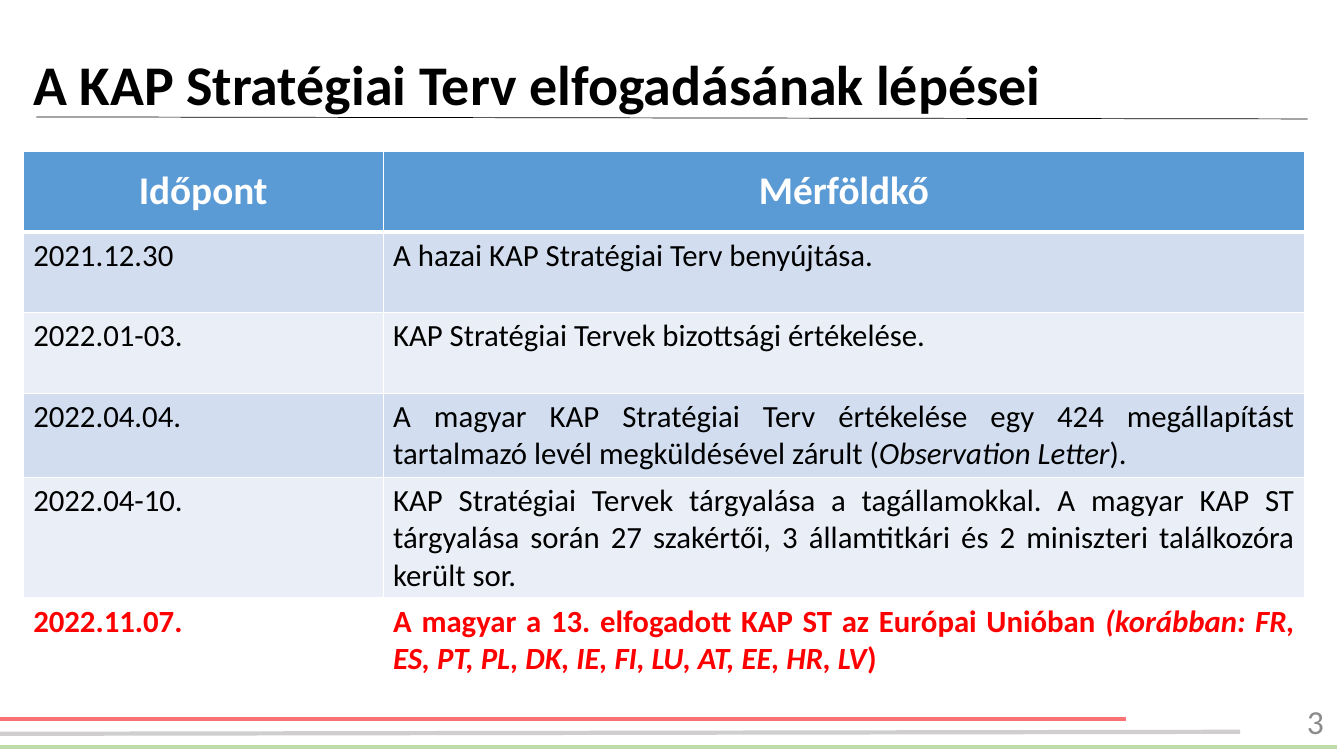
import pptx
import pptx.util
import pptx.dml.color
import pptx.enum.shapes
import pptx.enum.text
import pptx.oxml
import pptx.oxml.ns
import lxml.etree

Inches = pptx.util.Inches
Pt = pptx.util.Pt
Align = pptx.enum.text.PP_ALIGN
Anchor = pptx.enum.text.MSO_ANCHOR
qn = pptx.oxml.ns.qn


def color(value):
    return pptx.dml.color.RGBColor.from_string(value)


def add_run(para, text, size, shade, bold=False, italic=False):
    span = para.add_run()
    span.text = text
    span.font.name = "Calibri"
    span.font.size = Pt(size)
    span.font.color.rgb = color(shade)
    span.font.bold = bold
    span.font.italic = italic


deck = pptx.Presentation()
deck.slide_width = Inches(13.33)
deck.slide_height = Inches(7.5)
page = deck.slides.add_slide(deck.slide_layouts[6])

# Footer stripes and the rule under the title
rules = [
    (0, 7.13, 11.17, 7.13, "F97376", 3),
    (0, 7.41, 13.26, 7.41, "BEDCAA", 3),
    (0, 7.28, 12.3, 7.26, "D0CECE", 3),
    (0.36, 1.16, 12.97, 1.18, "000000", 0.5),
]
for x1, y1, x2, y2, shade, width in rules:
    rule = page.shapes.add_connector(
        pptx.enum.shapes.MSO_CONNECTOR.STRAIGHT,
        Inches(x1), Inches(y1), Inches(x2), Inches(y2))
    rule.line.color.rgb = color(shade)
    rule.line.width = Pt(width)
    lxml.etree.SubElement(rule.element.spPr, qn("a:effectLst"))

# Title and page number
labels = [
    ("A KAP Stratégiai Terv elfogadásának lépései",
     (0.23, 0.14, 11.5, 1.45), 40, "000000", True, Align.LEFT, 0.9),
    ("3", (10.23, 6.95, 3, 0.4), 24, "8C8C8C", False, Align.RIGHT, 1.0),
]
for text, place, size, shade, bold, align, spacing in labels:
    box = page.shapes.add_textbox(*[Inches(length) for length in place])
    box.text_frame.word_wrap = True
    box.text_frame.vertical_anchor = Anchor.MIDDLE
    para = box.text_frame.paragraphs[0]
    para.alignment = align
    para.line_spacing = spacing
    add_run(para, text, size, shade, bold)

# Milestone table: each milestone is a list of (text, italic) runs
milestones = [
    ("Időpont", [("Mérföldkő", False)]),
    ("2021.12.30", [("A hazai KAP Stratégiai Terv benyújtása.", False)]),
    ("2022.01-03.", [("KAP Stratégiai Tervek bizottsági értékelése.", False)]),
    ("2022.04.04.", [
        ("A magyar KAP Stratégiai Terv értékelése egy 424 megállapítást "
         "tartalmazó levél megküldésével zárult (", False),
        ("Observation Letter", True),
        (").", False)]),
    ("2022.04-10.", [
        ("KAP Stratégiai Tervek tárgyalása a tagállamokkal. A magyar KAP ST "
         "tárgyalása során 27 szakértői, 3 államtitkári és 2 miniszteri "
         "találkozóra került sor.", False)]),
    ("2022.11.07.", [
        ("A magyar a 13. elfogadott KAP ST az Európai Unióban ", False),
        ("(korábban: FR, ES, PT, PL, DK, IE, FI, LU, AT, EE, HR, LV", True),
        (")", False)]),
]
fills = ["5B9BD5", "D2DEEF", "EAEFF7", "D2DEEF", "EAEFF7", "FFFFFF"]
last = len(milestones) - 1
table = page.shapes.add_table(
    len(milestones), 2, Inches(0.23), Inches(1.5), Inches(12.71), Inches(4.8)).table
table.columns[0].width = Inches(3.57)
table.columns[1].width = Inches(9.14)

for row, (date, milestone) in enumerate(milestones):
    table.rows[row].height = Inches(0.8)
    header = row == 0
    shade = "FFFFFF" if header else "FF0000" if row == last else "000000"
    for column, spans in enumerate([[(date, False)], milestone]):
        cell = table.cell(row, column)
        cell.vertical_anchor = Anchor.MIDDLE if header else Anchor.TOP
        para = cell.text_frame.paragraphs[0]
        if header:
            para.alignment = Align.CENTER
        else:
            para.space_after = Pt(6)
            justified = column == 1 and row >= 3
            para.alignment = Align.JUSTIFY if justified else Align.LEFT
        for text, italic in spans:
            add_run(para, text, 28 if header else 22, shade,
                    header or row == last, italic)

        # Borders must precede the fill inside the cell properties
        properties = cell._tc.get_or_add_tcPr()
        for side in ("L", "R", "T", "B"):
            thick = (header and side == "B") or (row == 1 and side == "T")
            border = lxml.etree.SubElement(
                properties, qn(f"a:ln{side}"), w=str(Pt(3 if thick else 1)))
            solid = lxml.etree.SubElement(border, qn("a:solidFill"))
            lxml.etree.SubElement(solid, qn("a:srgbClr"), val="FFFFFF")
        cell.fill.solid()
        cell.fill.fore_color.rgb = color(fills[row])

deck.save("out.pptx")
